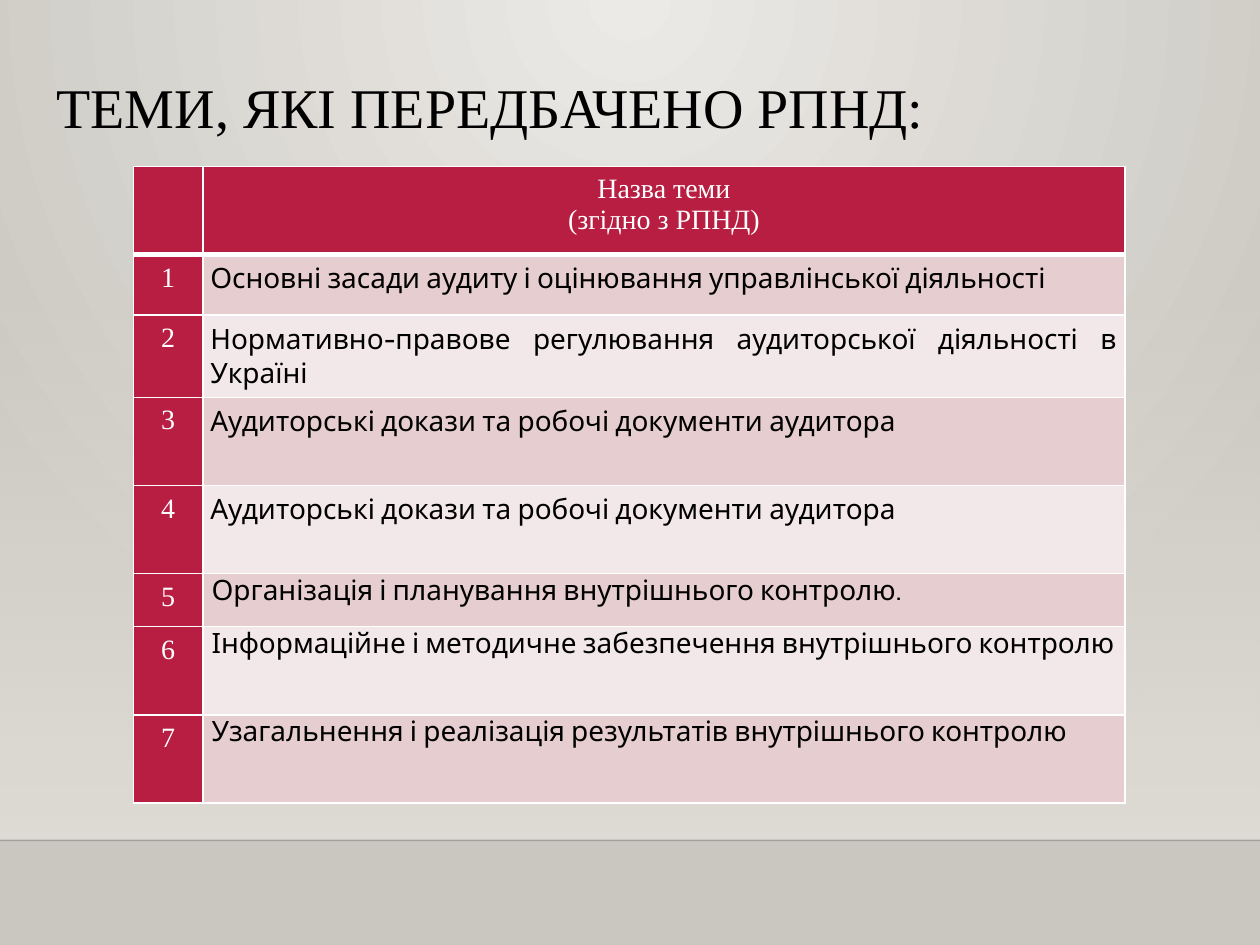
import pptx
import pptx.util
import pptx.dml.color
import pptx.enum.shapes
import pptx.enum.text
import pptx.oxml
import pptx.oxml.ns

Inches = pptx.util.Inches
Align = pptx.enum.text.PP_ALIGN
Anchor = pptx.enum.text.MSO_ANCHOR

TITLE = "ТЕМИ, ЯКІ ПЕРЕДБАЧЕНО РПНД:"
HEADER = ["Назва теми", "(згідно з РПНД)"]
TOPICS = [
    ("Основні засади аудиту і оцінювання управлінської діяльності", 0.48),
    ("Нормативно-правове регулювання аудиторської діяльності в Україні", 0.47),
    ("Аудиторські докази та робочі документи аудитора", 0.7),
    ("Аудиторські докази та робочі документи аудитора", 0.7),
    ("Організація і планування внутрішнього контролю.", 0.42),
    ("Інформаційне і методичне забезпечення внутрішнього контролю", 0.7),
    ("Узагальнення і реалізація результатів внутрішнього контролю", 0.7),
]
HEADER_HEIGHT = 0.7
COLUMNS = [0.55, 7.32]
FIRST_TIGHT_TOPIC = 5
CRIMSON, WHITE, BLACK = "B71E42", "FFFFFF", "000000"
BANDS = ["E6CDCF", "F3E8E9"]
SERIF = {"name": "Times New Roman", "size": pptx.util.Pt(16)}
LABEL = (SERIF, WHITE, Align.CENTER)
TOPIC = ({**SERIF, "name": "Cabin"}, BLACK, Align.JUSTIFY)
NORMAL_INSETS = (0.06, 0.06)
TIGHT_INSETS = (0.07, 0)


def rgb(value):
    return pptx.dml.color.RGBColor.from_string(value)


def element(xml):
    tag, rest = xml[:-1].split(">", 1) if ">" in xml[:-1] else (xml[:-2], None)
    tag += " " + pptx.oxml.ns.nsdecls("a")
    return pptx.oxml.parse_xml(tag + "/>" if rest is None else tag + ">" + rest + ">")


def gradient(fill_owner, stops, direction):
    solid = fill_owner.find(pptx.oxml.ns.qn("a:solidFill"))
    marks = "".join(
        f'<a:gs pos="{place * 1000}"><a:srgbClr val="{color}"><a:alpha val="{alpha * 1000}"/></a:srgbClr></a:gs>'
        for place, color, alpha in stops
    )
    fill_owner.replace(solid, element(f"<a:gradFill><a:gsLst>{marks}</a:gsLst>{direction}</a:gradFill>"))


def write(frame, lines, style, color, align):
    for index, line in enumerate(lines):
        para = frame.paragraphs[0] if index == 0 else frame.add_paragraph()
        para.alignment = align
        span = para.add_run()
        span.text = line
        for name, value in style.items():
            setattr(span.font, name, value)
        span.font.color.rgb = rgb(color)


def set_borders(cell, top, bottom):
    widths = {"lnL": 1, "lnR": 1, "lnT": top, "lnB": bottom}
    properties = cell._tc.get_or_add_tcPr()
    for index, (side, width) in enumerate(widths.items()):
        properties.insert(index, element(
            f'<a:{side} w="{width * 12700}"><a:solidFill><a:srgbClr val="{WHITE}"/></a:solidFill></a:{side}>'))


def fill_cell(cell, lines, look, fill, insets, row):
    side, edge = (Inches(inset) for inset in insets)
    margins = {"margin_left": side, "margin_right": side, "margin_top": edge, "margin_bottom": edge}
    for name, value in margins.items():
        setattr(cell, name, value)
    cell.fill.solid()
    cell.fill.fore_color.rgb = rgb(fill)
    set_borders(cell, 3 if row == 1 else 1, 3 if row == 0 else 1)
    write(cell.text_frame, lines, *look)


def add_backdrop(page):
    page.background.fill.solid()
    gradient(page.background._cSld.bg.bgPr, [(0, "ECEAE7", 100), (100, "CAC7C1", 100)],
             '<a:path path="circle"><a:fillToRect l="43000" t="0" r="43000" b="100000"/></a:path>')
    glow = page.shapes.add_shape(pptx.enum.shapes.MSO_SHAPE.RECTANGLE,
                                 Inches(0), Inches(2.2), Inches(10), Inches(4.46))
    glow.shadow.inherit = False
    glow.line.fill.background()
    glow.fill.solid()
    gradient(glow._element.spPr, [(0, "DFDBD5", 0), (100, "DFDBD5", 100)], '<a:lin ang="5400000" scaled="0"/>')
    floor = page.shapes.add_connector(pptx.enum.shapes.MSO_CONNECTOR.STRAIGHT,
                                      Inches(0), Inches(6.67), Inches(10), Inches(6.67))
    floor.line.width = pptx.util.Pt(1)
    floor.line.color.rgb = rgb("000001")
    color = floor._element.spPr.find(".//" + pptx.oxml.ns.qn("a:srgbClr"))
    color.append(element('<a:alpha val="20000"/>'))
    floor._element.spPr.append(element("<a:effectLst/>"))


def add_title(page):
    box = page.shapes.add_textbox(Inches(0.35), Inches(0.52), Inches(8.28), Inches(0.71))
    frame = box.text_frame
    frame.word_wrap = True
    frame.vertical_anchor = Anchor.MIDDLE
    write(frame, [TITLE], {**SERIF, "size": pptx.util.Pt(32)}, BLACK, Align.LEFT)
    para = frame.paragraphs[0]
    para.line_spacing = 0.9
    fill = para.runs[0]._r.rPr.find(pptx.oxml.ns.qn("a:solidFill"))
    fill.addnext(element(
        '<a:effectLst><a:outerShdw blurRad="50800" dist="38100" dir="2700000">'
        '<a:srgbClr val="000000"><a:alpha val="40000"/></a:srgbClr></a:outerShdw></a:effectLst>'))


def add_topics(page):
    heights = [HEADER_HEIGHT] + [height for _, height in TOPICS]
    table = page.shapes.add_table(len(heights), len(COLUMNS), Inches(1.06), Inches(1.32),
                                  Inches(sum(COLUMNS)), Inches(sum(heights))).table
    for column, width in zip(table.columns, COLUMNS):
        column.width = Inches(width)
    for row, height in zip(table.rows, heights):
        row.height = Inches(height)
    fill_cell(table.cell(0, 0), [], LABEL, CRIMSON, NORMAL_INSETS, 0)
    fill_cell(table.cell(0, 1), HEADER, LABEL, CRIMSON, NORMAL_INSETS, 0)
    for number, (topic, _) in enumerate(TOPICS, 1):
        insets = TIGHT_INSETS if number >= FIRST_TIGHT_TOPIC else NORMAL_INSETS
        fill_cell(table.cell(number, 0), [str(number)], LABEL, CRIMSON, NORMAL_INSETS, number)
        fill_cell(table.cell(number, 1), [topic], TOPIC, BANDS[(number - 1) % 2], insets, number)


def main():
    deck = pptx.Presentation()
    deck.slide_width, deck.slide_height = Inches(10), Inches(7.5)
    page = deck.slides.add_slide(deck.slide_layouts[6])
    add_backdrop(page)
    add_title(page)
    add_topics(page)
    deck.save("out.pptx")


if __name__ == "__main__":
    main()
